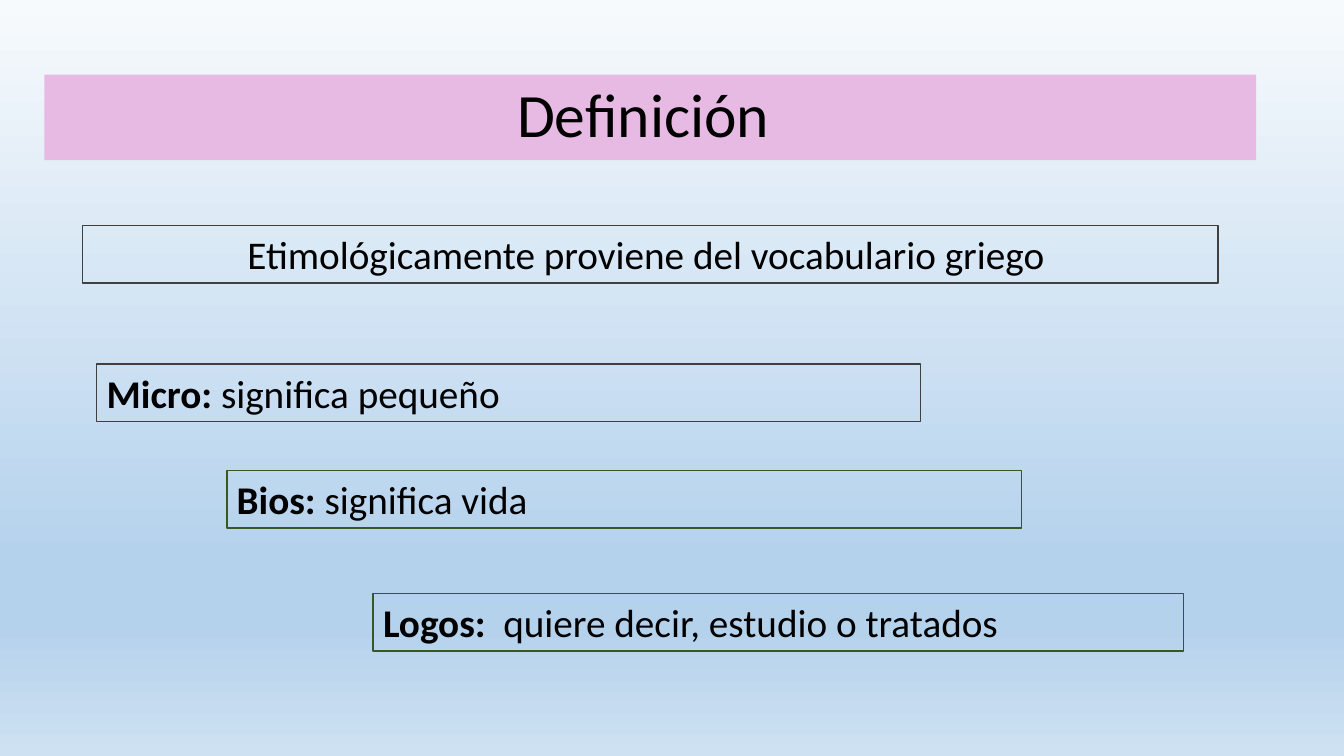
from copy import deepcopy

from pptx import Presentation
from pptx import util as u
from pptx.dml import color
from pptx.enum import text
from pptx.oxml import ns

HUES = {"ink": "000000", "pink": "E7BAE4", "grey": "404040", "green": "385723"}
SKY = [(0, "F7FAFD"), (0.74, "B5D2EC"), (0.83, "B5D2EC"), (1, "CEE1F2")]


def tint(code):
    return color.RGBColor.from_string(code)


def apply(item, form):
    for key, value in form.items():
        setattr(item, key, value)


class Page:
    font = "Calibri"
    box_high = 7.6

    def __init__(self, wide, high):
        self.deck = Presentation()
        apply(self.deck, {"slide_width": u.Inches(wide), "slide_height": u.Inches(high)})
        self.slide = self.deck.slides.add_slide(self.deck.slide_layouts[5])

    def place(self, left, top, width, height):
        wide, high = self.deck.slide_width, self.deck.slide_height
        return {
            "left": int(wide * left / 100),
            "top": int(high * top / 100),
            "width": int(wide * width / 100),
            "height": int(high * height / 100),
        }

    def sky(self, stops):
        fill = self.slide.background.fill
        fill.gradient()
        fill.gradient_angle = 270
        ramp = self.slide.element.find(".//" + ns.qn("a:gsLst"))
        while len(ramp) < len(stops):
            ramp.append(deepcopy(ramp[0]))
        for stop, (share, code) in zip(fill.gradient_stops, stops):
            stop.position = share
            stop.color.rgb = tint(code)

    def label(self, shape, parts, size, align, frame, **form):
        apply(shape.text_frame, {"word_wrap": True, **frame})
        para = shape.text_frame.paragraphs[0]
        apply(para, {"alignment": align, **form})
        for words, bold in parts:
            run = para.add_run()
            run.text = words
            apply(run.font, {"name": self.font, "size": u.Pt(size), "bold": bold})
            run.font.color.rgb = tint(HUES["ink"])

    def title(self, words, spot):
        shape = self.slide.shapes.title
        apply(shape, self.place(*spot))
        shape.fill.solid()
        shape.fill.fore_color.rgb = tint(HUES["pink"])
        frame = {
            "auto_size": text.MSO_AUTO_SIZE.NONE,
            "vertical_anchor": text.MSO_ANCHOR.MIDDLE,
        }
        self.label(shape, [(words, False)], 44, text.PP_ALIGN.CENTER, frame, line_spacing=0.9)

    def box(self, parts, left, top, width, hue, align=text.PP_ALIGN.LEFT):
        spot = self.place(left, top, width, self.box_high)
        shape = self.slide.shapes.add_textbox(**spot)
        shape.line.color.rgb = tint(HUES[hue])
        shape.line.width = u.Pt(1)
        frame = {"auto_size": text.MSO_AUTO_SIZE.SHAPE_TO_FIT_TEXT}
        self.label(shape, parts, 28, align, frame)


def main():
    page = Page(13.33, 7.5)
    page.sky(SKY)
    page.title("Definición ", (3.3, 9.87, 90.17, 11.33))
    intro = "Etimológicamente proviene del vocabulario griego "
    page.box([(intro, False)], 6.15, 29.87, 84.47, "grey", text.PP_ALIGN.CENTER)
    roots = [
        ("Micro: ", "significa pequeño", 7.2, 48.13, 61.29, "grey"),
        ("Bios: ", "significa vida", 16.88, 62.27, 59.11, "green"),
        ("Logos:  ", "quiere decir, estudio o tratados", 27.76, 78.53, 60.32, "green"),
    ]
    for root, sense, *spot in roots:
        page.box([(root, True), (sense, False)], *spot)
    page.deck.save("out.pptx")


if __name__ == "__main__":
    main()
